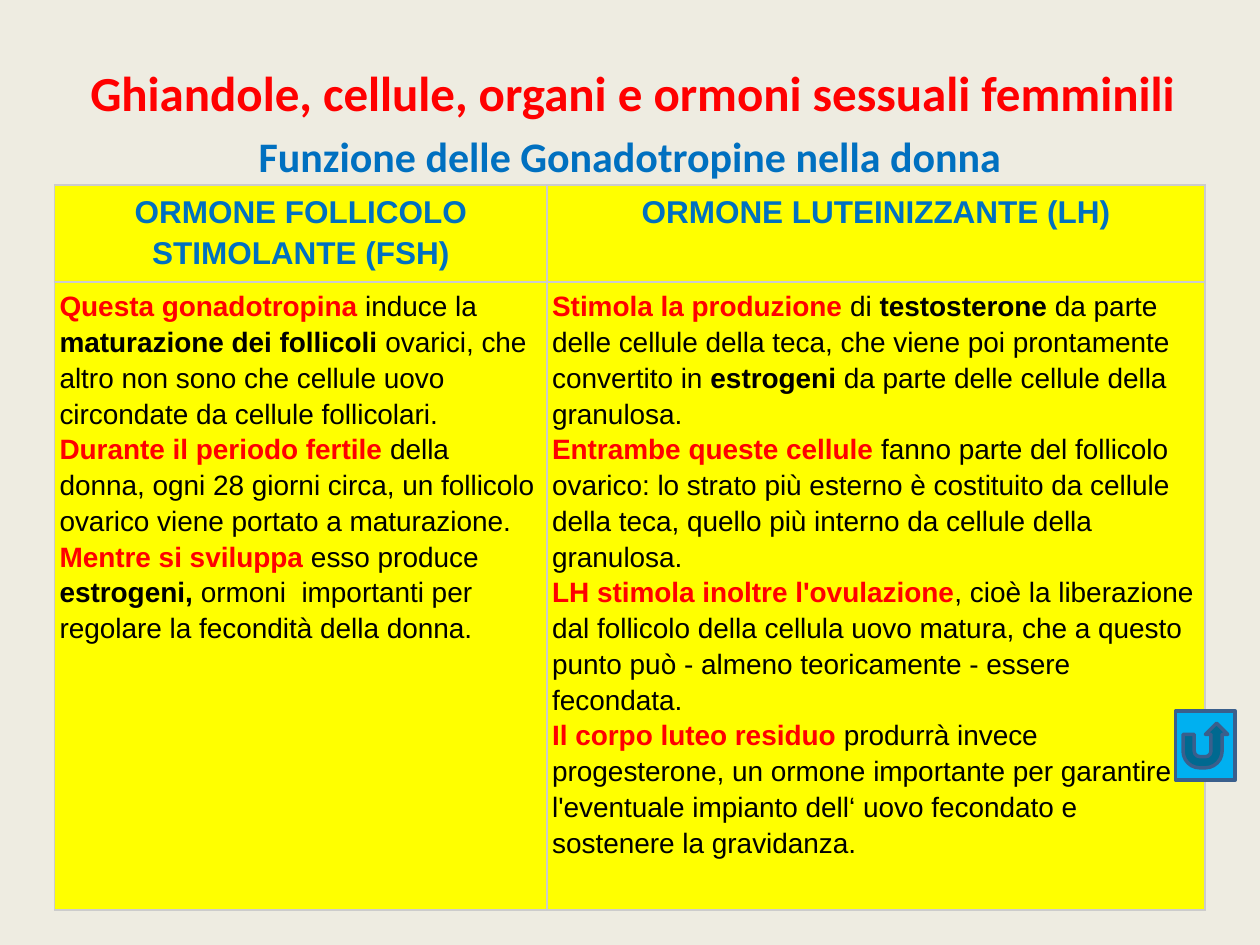
"""Build the slide on the function of gonadotropins in women."""
from typing import NamedTuple

from lxml.etree import SubElement
from pptx import Presentation
from pptx.dml.color import RGBColor
from pptx.enum.shapes import MSO_SHAPE
from pptx.enum.text import MSO_ANCHOR, MSO_AUTO_SIZE, PP_ALIGN
from pptx.oxml.ns import qn
from pptx.util import Cm, Pt

RED = RGBColor(0xFF, 0x00, 0x00)
BLUE = RGBColor(0x00, 0x70, 0xC0)
BLACK = RGBColor(0x00, 0x00, 0x00)
YELLOW = RGBColor(0xFF, 0xFF, 0x00)
BEIGE = RGBColor(0xEE, 0xEC, 0xE1)
GREY = RGBColor(0xCC, 0xCC, 0xCC)
SKY = RGBColor(0x00, 0xB0, 0xF0)
NAVY = RGBColor(0x3A, 0x5F, 0x8C)


class Span(NamedTuple):
    text: str
    bold: bool = False
    color: RGBColor = BLACK


class Hormone(NamedTuple):
    name: str
    width: float
    paragraphs: list[list[Span]]


def lead(text: str) -> Span:
    return Span(text, True, RED)


def strong(text: str) -> Span:
    return Span(text, True)


HORMONES = [
    Hormone("ORMONE FOLLICOLO STIMOLANTE (FSH)", 9.93, [
        [lead("Questa gonadotropina "), Span("induce la "), strong("maturazione dei follicoli"),
         Span(" ovarici, che altro non sono che cellule uovo circondate da cellule follicolari. "),
         lead("Durante il periodo fertile "),
         Span("della donna, ogni 28 giorni circa, un follicolo ovarico viene portato a maturazione.")],
        [lead("Mentre si sviluppa "), Span("esso produce "), strong("estrogeni, "),
         Span("ormoni  importanti per regolare la fecondità della donna.")],
    ]),
    Hormone("ORMONE LUTEINIZZANTE (LH)", 13.26, [
        [lead("Stimola la produzione "), Span("di "), strong("testosterone"),
         Span(" da parte delle cellule della teca, che viene poi prontamente convertito in "),
         strong("estrogeni"), Span(" da parte delle cellule della granulosa.")],
        [lead("Entrambe queste cellule "),
         Span("fanno parte del follicolo ovarico: lo strato più esterno è costituito da cellule "
              "della teca, quello più interno da cellule della granulosa.")],
        [lead("LH stimola inoltre l'ovulazione"),
         Span(", cioè la liberazione dal follicolo della cellula uovo matura, che a questo punto "
              "può - almeno teoricamente - essere fecondata.")],
        [lead("Il corpo luteo residuo "),
         Span("produrrà invece progesterone, un ormone importante per garantire l'eventuale "
              "impianto dell‘ uovo fecondato e sostenere la gravidanza.")],
    ]),
]
ROW_HEIGHTS = [1.95, 12.66]


def write_heading(paragraph, text: str, font: str, size: int, color: RGBColor) -> None:
    paragraph.text = text
    paragraph.alignment = PP_ALIGN.CENTER
    paragraph.font.name = font
    paragraph.font.size = Pt(size)
    paragraph.font.bold = True
    paragraph.font.color.rgb = color


def write_body(frame, paragraphs: list[list[Span]]) -> None:
    for index, spans in enumerate(paragraphs):
        paragraph = frame.add_paragraph() if index else frame.paragraphs[0]
        paragraph.line_spacing = 1.15
        paragraph.font.name = "Arial"
        paragraph.font.size = Pt(16)
        for span in spans:
            run = paragraph.add_run()
            run.text = span.text
            run.font.bold = span.bold
            run.font.color.rgb = span.color


def style_cell(cell) -> None:
    cell.margin_left = cell.margin_right = cell.margin_top = cell.margin_bottom = Cm(0.1)
    properties = cell._tc.get_or_add_tcPr()
    for side in ("lnL", "lnR", "lnT", "lnB"):
        border = SubElement(properties, qn(f"a:{side}"), w=str(Pt(1)))
        fill = SubElement(border, qn("a:solidFill"))
        SubElement(fill, qn("a:srgbClr"), val=str(GREY))
    cell.fill.solid()
    cell.fill.fore_color.rgb = YELLOW


def add_title(page) -> None:
    title = page.shapes.title
    title.left, title.top, title.width, title.height = Cm(0.89), Cm(0.74), Cm(23.39), Cm(1.8)
    frame = title.text_frame
    frame.auto_size = MSO_AUTO_SIZE.NONE
    frame.vertical_anchor = MSO_ANCHOR.BOTTOM
    frame.margin_left, frame.margin_bottom = Cm(0.58), Cm(0.1)
    write_heading(frame.paragraphs[0], "Ghiandole, cellule, organi e ormoni sessuali femminili",
                  "Calibri", 28, RED)


def add_subtitle(page) -> None:
    box = page.shapes.add_textbox(Cm(4.5), Cm(2.51), Cm(16.4), Cm(1.28))
    box.text_frame.word_wrap = True
    write_heading(box.text_frame.paragraphs[0], "Funzione delle Gonadotropine nella donna",
                  "Calibri", 24, BLUE)


def add_hormone_table(page) -> None:
    width = sum(hormone.width for hormone in HORMONES)
    table = page.shapes.add_table(len(ROW_HEIGHTS), len(HORMONES), Cm(1.1), Cm(3.73),
                                  Cm(width), Cm(sum(ROW_HEIGHTS))).table
    table.first_row = table.horz_banding = False
    for row, height in zip(table.rows, ROW_HEIGHTS):
        row.height = Cm(height)
    for index, hormone in enumerate(HORMONES):
        table.columns[index].width = Cm(hormone.width)
        header, body = table.cell(0, index), table.cell(1, index)
        style_cell(header)
        style_cell(body)
        paragraph = header.text_frame.paragraphs[0]
        write_heading(paragraph, hormone.name, "Arial", 18, BLUE)
        paragraph.line_spacing = 1.15
        paragraph.space_after = Pt(10)
        write_body(body.text_frame, hormone.paragraphs)


def add_return_button(page) -> None:
    button = page.shapes.add_shape(MSO_SHAPE.ACTION_BUTTON_RETURN,
                                   Cm(23.7), Cm(14.33), Cm(1.2), Cm(1.4))
    button.shadow.inherit = False
    button.fill.solid()
    button.fill.fore_color.rgb = SKY
    button.line.color.rgb = NAVY
    button.line.width = Pt(2)


def main() -> None:
    deck = Presentation()
    deck.slide_width, deck.slide_height = Cm(25.4), Cm(19.05)
    page = deck.slides.add_slide(deck.slide_layouts[5])
    page.background.fill.solid()
    page.background.fill.fore_color.rgb = BEIGE
    add_title(page)
    add_subtitle(page)
    add_hormone_table(page)
    add_return_button(page)
    deck.save("out.pptx")


if __name__ == "__main__":
    main()
